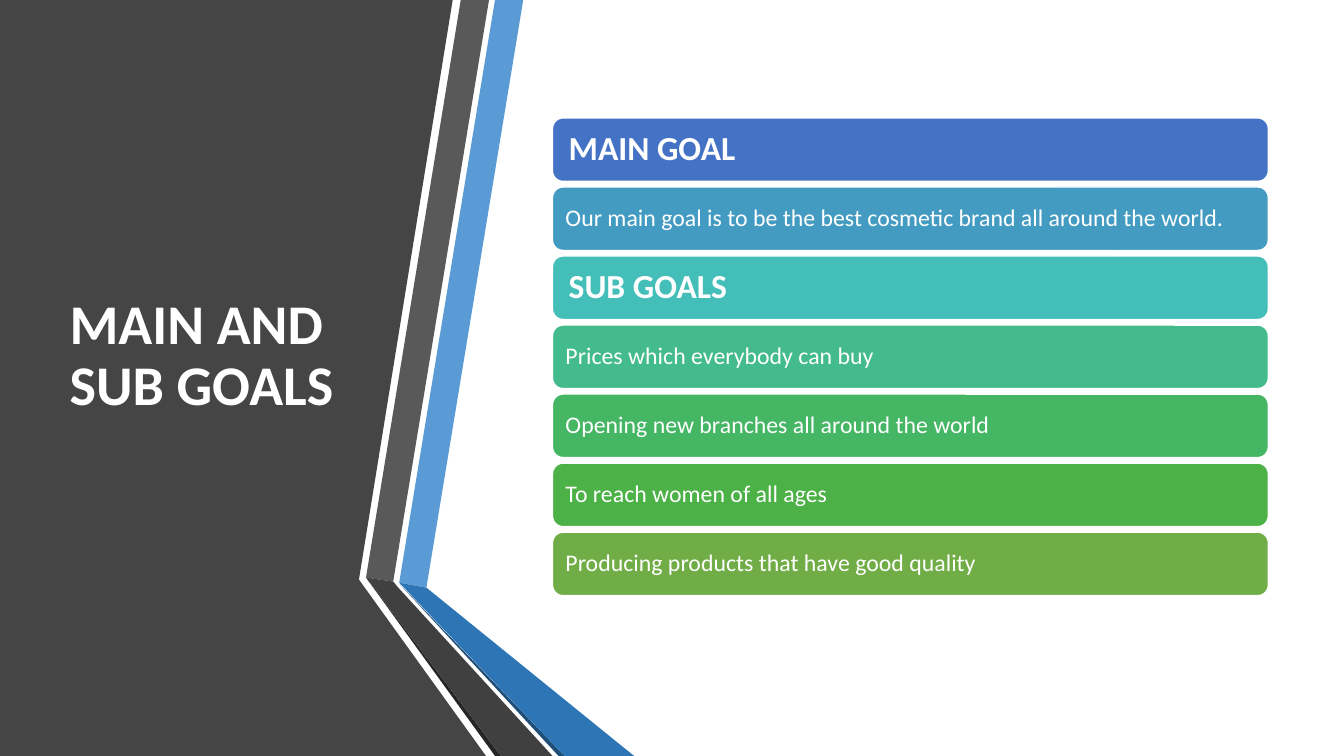
from pptx import Presentation
from pptx.dml.color import RGBColor
from pptx.enum.shapes import MSO_SHAPE
from pptx.enum.text import MSO_ANCHOR, MSO_AUTO_SIZE, PP_ALIGN
from pptx.util import Inches, Pt

WHITE = RGBColor(0xFF, 0xFF, 0xFF)
PANEL_GREY = RGBColor(0x45, 0x45, 0x45)
LIGHT_BLUE = RGBColor(0x5B, 0x9B, 0xD5)
MID_GREY = RGBColor(0x59, 0x59, 0x59)
NEAR_BLACK = RGBColor(0x26, 0x26, 0x26)
NAVY = RGBColor(0x1F, 0x4E, 0x79)
DEEP_BLUE = RGBColor(0x2E, 0x75, 0xB6)
DARK_GREY = RGBColor(0x40, 0x40, 0x40)
ROYAL_BLUE = RGBColor(0x44, 0x72, 0xC4)
SKY_BLUE = RGBColor(0x44, 0x9B, 0xC1)
TURQUOISE = RGBColor(0x43, 0xBE, 0xB9)
SEA_GREEN = RGBColor(0x43, 0xBB, 0x8D)
EMERALD = RGBColor(0x45, 0xB6, 0x64)
GREEN = RGBColor(0x4C, 0xB1, 0x46)
OLIVE = RGBColor(0x70, 0xAD, 0x47)


def write_text(shape, wording, size, bold, inset):
    frame = shape.text_frame
    frame.text = wording
    frame_format = {
        "word_wrap": True,
        "auto_size": MSO_AUTO_SIZE.NONE,
        "vertical_anchor": MSO_ANCHOR.MIDDLE,
        "margin_left": Inches(inset),
        "margin_right": Inches(inset),
        "margin_top": Inches(0.05),
        "margin_bottom": Inches(0.05),
    }
    for name, value in frame_format.items():
        setattr(frame, name, value)
    paragraph = frame.paragraphs[0]
    paragraph.alignment = PP_ALIGN.LEFT
    paragraph.line_spacing = 0.9
    font_format = {"name": "Calibri", "size": Pt(size), "bold": bold}
    for name, value in font_format.items():
        setattr(paragraph.runs[0].font, name, value)
    paragraph.runs[0].font.color.rgb = WHITE


presentation = Presentation()
presentation.slide_width = Inches(13.33)
presentation.slide_height = Inches(7.5)
slide = presentation.slides.add_slide(presentation.slide_layouts[5])
slide.background.fill.solid()
slide.background.fill.fore_color.rgb = WHITE

ribbons = [
    (PANEL_GREY, [(0, 0), (4.49, 0), (3.56, 5.75), (4.82, 7.5), (0, 7.5)]),
    (LIGHT_BLUE, [(3.96, 5.78), (4.23, 5.83), (5.19, 0), (4.91, 0)]),
    (MID_GREY, [(4.85, 0), (4.57, 0), (3.63, 5.73), (3.9, 5.77)]),
    (NEAR_BLACK, [(3.63, 5.73), (4.91, 7.5), (4.97, 7.5)]),
    (NAVY, [(3.96, 5.79), (5.54, 7.5), (5.6, 7.5)]),
    (DEEP_BLUE, [(3.96, 5.78), (5.6, 7.5), (6.29, 7.5), (4.23, 5.83)]),
    (DARK_GREY, [(5.48, 7.5), (3.95, 5.83), (3.9, 5.77), (3.63, 5.73), (4.97, 7.5)]),
]
for color, corners in ribbons:
    points = [(Inches(x), Inches(y)) for x, y in corners]
    outline = slide.shapes.build_freeform(*points[0])
    outline.add_line_segments(points[1:], close=True)
    ribbon = outline.convert_to_shape()
    ribbon.shadow.inherit = False
    ribbon.fill.solid()
    ribbon.fill.fore_color.rgb = color
    ribbon.line.fill.background()

title = slide.shapes.title
slide.shapes._spTree.append(title._element)
title_box = {"left": 0.59, "top": 0.75, "width": 3.04, "height": 5.58}
for side, length in title_box.items():
    setattr(title, side, Inches(length))
write_text(title, "MAIN AND SUB GOALS", 40, True, 0.1)

goals = [
    ("MAIN GOAL", ROYAL_BLUE, True),
    ("Our main goal is to be the best cosmetic brand all around the world.", SKY_BLUE, False),
    ("SUB GOALS", TURQUOISE, True),
    ("Prices which everybody can buy", SEA_GREEN, False),
    ("Opening new branches all around the world", EMERALD, False),
    ("To reach women of all ages", GREEN, False),
    ("Producing products that have good quality", OLIVE, False),
]
first_top, last_top = 1.17, 5.28
pitch = (last_top - first_top) / (len(goals) - 1)
for row, (wording, color, is_heading) in enumerate(goals):
    goal = slide.shapes.add_shape(
        MSO_SHAPE.ROUNDED_RECTANGLE,
        Inches(5.48), Inches(first_top + row * pitch), Inches(7.1), Inches(0.63),
    )
    goal.shadow.inherit = False
    goal.fill.solid()
    goal.fill.fore_color.rgb = color
    goal.line.color.rgb = WHITE
    goal.line.width = Pt(1)
    size, inset = (24, 0.13) if is_heading else (17, 0.1)
    write_text(goal, wording, size, is_heading, inset)

presentation.save("out.pptx")
